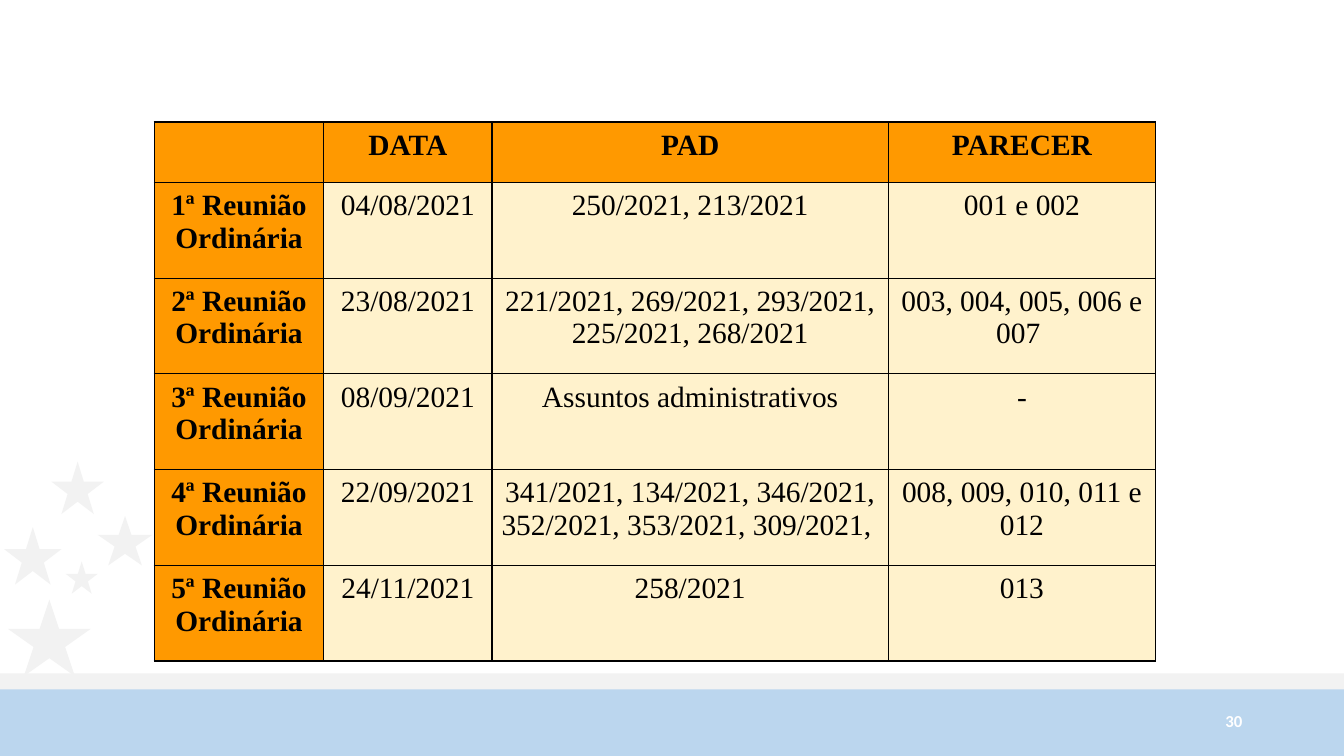
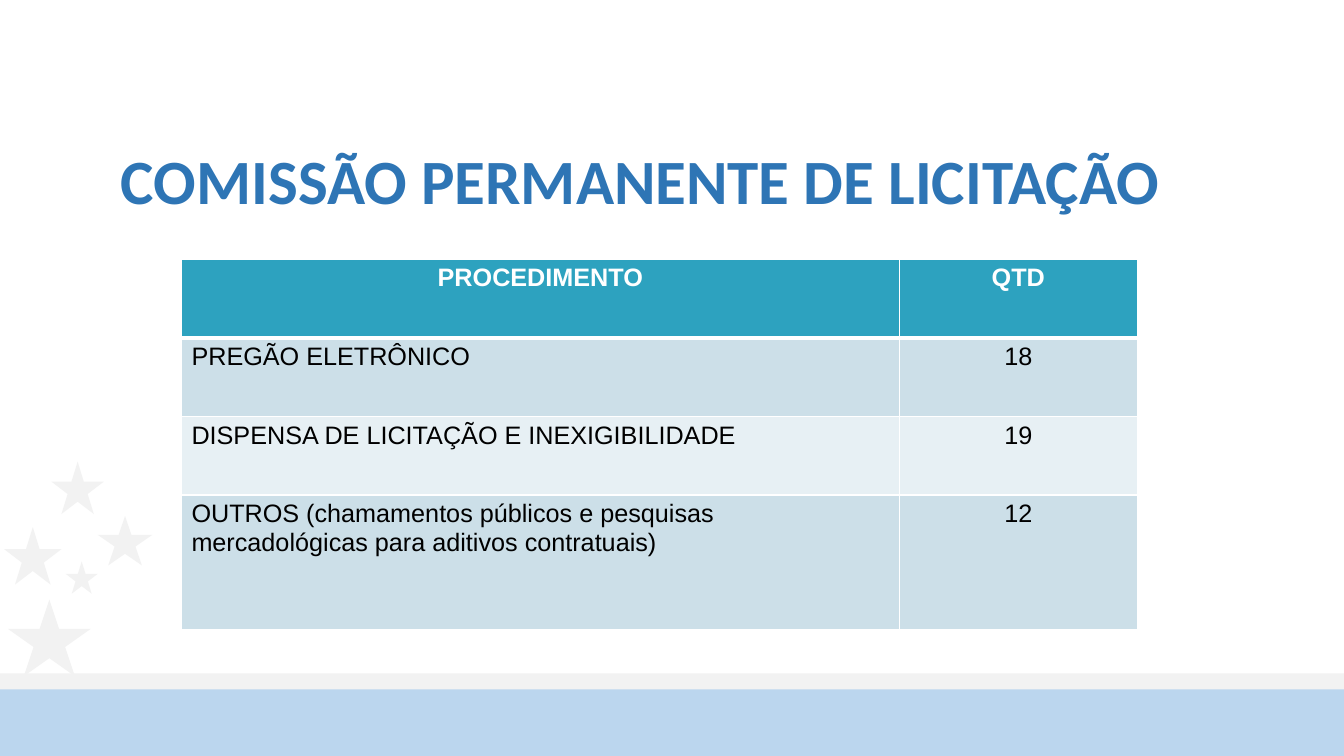
from lxml.etree import SubElement
from pptx import Presentation
from pptx.dml.color import RGBColor
from pptx.enum.shapes import MSO_SHAPE
from pptx.enum.text import MSO_ANCHOR, PP_ALIGN
from pptx.oxml.ns import qn
from pptx.util import Inches, Pt

WIDE, HIGH = Inches(13.33), Inches(7.5)
HEX = {
    "band": "BBD6EE", "pale": "F2F2F2", "title": "2E75B5",
    "black": "000000", "white": "FFFFFF",
    "orange": "FF9900", "cream": "FFF2CC",
    "teal": "2DA2BF", "mist": "CCDFE8", "ice": "E7F0F4",
}
STARS = [
    (0.3, 69.73, 4.28, 7.6),
    (4.88, 74.27, 2.4, 4.27),
    (0.6, 79.33, 6.15, 10.13),
    (3.83, 61.07, 3.9, 6.93),
    (7.28, 68.27, 4.05, 6.53),
]
MEETINGS = [
    ("", "DATA", "PAD", "PARECER"),
    ("1ª Reunião Ordinária", "04/08/2021", "250/2021, 213/2021", "001 e 002"),
    ("2ª Reunião Ordinária", "23/08/2021",
     "221/2021, 269/2021, 293/2021, 225/2021, 268/2021", "003, 004, 005, 006 e 007 "),
    ("3ª Reunião Ordinária", "08/09/2021", "Assuntos administrativos", "-"),
    ("4ª Reunião Ordinária", "22/09/2021",
     "341/2021, 134/2021, 346/2021, 352/2021, 353/2021, 309/2021, ",
     "008, 009, 010, 011 e 012"),
    ("5ª Reunião Ordinária", "24/11/2021", "258/2021", "013"),
]
BIDS = [
    ("PROCEDIMENTO", "QTD"),
    ("PREGÃO ELETRÔNICO", "18"),
    ("DISPENSA DE LICITAÇÃO E INEXIGIBILIDADE", "19"),
    ("OUTROS (chamamentos públicos e pesquisas mercadológicas "
     "para aditivos contratuais)", "12"),
]


def color(name):
    return RGBColor.from_string(HEX[name])


def place(x, y, w, h):
    return [int(side * part / 100)
            for side, part in zip((WIDE, HIGH, WIDE, HIGH), (x, y, w, h))]


def style(para, face, size, ink, bold=False, align=PP_ALIGN.CENTER):
    para.alignment = align
    font = para.font
    font.name, font.size, font.bold = face, Pt(size), bold
    font.color.rgb = color(ink)


def shape(slide, kind, box, fill):
    item = slide.shapes.add_shape(kind, *place(*box))
    item.shadow.inherit = False
    item.fill.solid()
    item.fill.fore_color.rgb = color(fill)
    item.line.fill.background()


def frame(slide):
    shape(slide, MSO_SHAPE.RECTANGLE, (0, 90.93, 100, 9.07), "band")
    shape(slide, MSO_SHAPE.RECTANGLE, (0, 89.07, 100, 2.13), "pale")
    for box in STARS:
        shape(slide, MSO_SHAPE.STAR_5_POINT, box, "pale")


def border(cell, ink, low=1):
    props = cell._tc.get_or_add_tcPr()
    for side, width in (("L", 1), ("R", 1), ("T", 1), ("B", low)):
        line = SubElement(props, qn("a:ln" + side), w=str(Pt(width)))
        fill = SubElement(line, qn("a:solidFill"))
        SubElement(fill, qn("a:srgbClr"), val=HEX[ink])


def grid(slide, box, data, cols, rows, paint):
    left, top, width, height = place(*box)
    table = slide.shapes.add_table(
        len(rows), len(cols), left, top, width, height).table
    for col, share in zip(table.columns, cols):
        col.width = int(width * share / sum(cols))
    for row, share in zip(table.rows, rows):
        row.height = int(height * share / sum(rows))
    for r, line in enumerate(data):
        for c, text in enumerate(line):
            cell = table.cell(r, c)
            cell.text = text
            paint(cell, r, c)


def fill(cell, name):
    cell.fill.solid()
    cell.fill.fore_color.rgb = color(name)


def meeting(cell, r, c):
    head = r == 0 or c == 0
    cell.margin_left = cell.margin_right = Inches(0.07)
    cell.margin_top = cell.margin_bottom = Inches(0.07)
    border(cell, "black")
    fill(cell, "orange" if head else "cream")
    style(cell.text_frame.paragraphs[0], "Times New Roman", 21, "black", head)


def bid(cell, r, c):
    head = r == 0
    border(cell, "white", 3 if head else 1)
    fill(cell, "teal" if head else ("ice", "mist")[r % 2])
    align = PP_ALIGN.CENTER if head or c else PP_ALIGN.LEFT
    style(cell.text_frame.paragraphs[0], "Arial", 18,
          "white" if head else "black", head, align)


def number(slide, text):
    frame = slide.shapes.add_textbox(*place(70.67, 92.67, 22.5, 5.33)).text_frame
    frame.word_wrap = True
    frame.vertical_anchor = MSO_ANCHOR.MIDDLE
    frame.text = text
    style(frame.paragraphs[0], "Calibri", 12, "white", True, PP_ALIGN.RIGHT)


def heading(slide, text):
    title = slide.shapes.title
    title.left, title.top, title.width, title.height = place(7.88, 15.87, 79.52, 17.07)
    title.text = text
    title.text_frame.vertical_anchor = MSO_ANCHOR.MIDDLE
    para = title.text_frame.paragraphs[0]
    para.line_spacing = 0.9
    style(para, "Calibri", 45, "title", True)


def agenda(deck):
    slide = deck.slides.add_slide(deck.slide_layouts[6])
    frame(slide)
    number(slide, "30")
    grid(slide, (11.48, 16.13, 74.5, 71.33), MEETINGS,
         (1.68, 1.67, 3.93, 2.65), [0.6] + [0.95] * 5, meeting)


def tender(deck):
    slide = deck.slides.add_slide(deck.slide_layouts[5])
    frame(slide)
    heading(slide, "COMISSÃO PERMANENTE DE LICITAÇÃO")
    grid(slide, (13.5, 34.27, 71.12, 49.07), BIDS,
         (7.12, 2.36), (0.78, 0.78, 0.78, 1.34), bid)


def main():
    deck = Presentation()
    deck.slide_width, deck.slide_height = WIDE, HIGH
    agenda(deck)
    tender(deck)
    deck.save("out.pptx")


if __name__ == "__main__":
    main()
